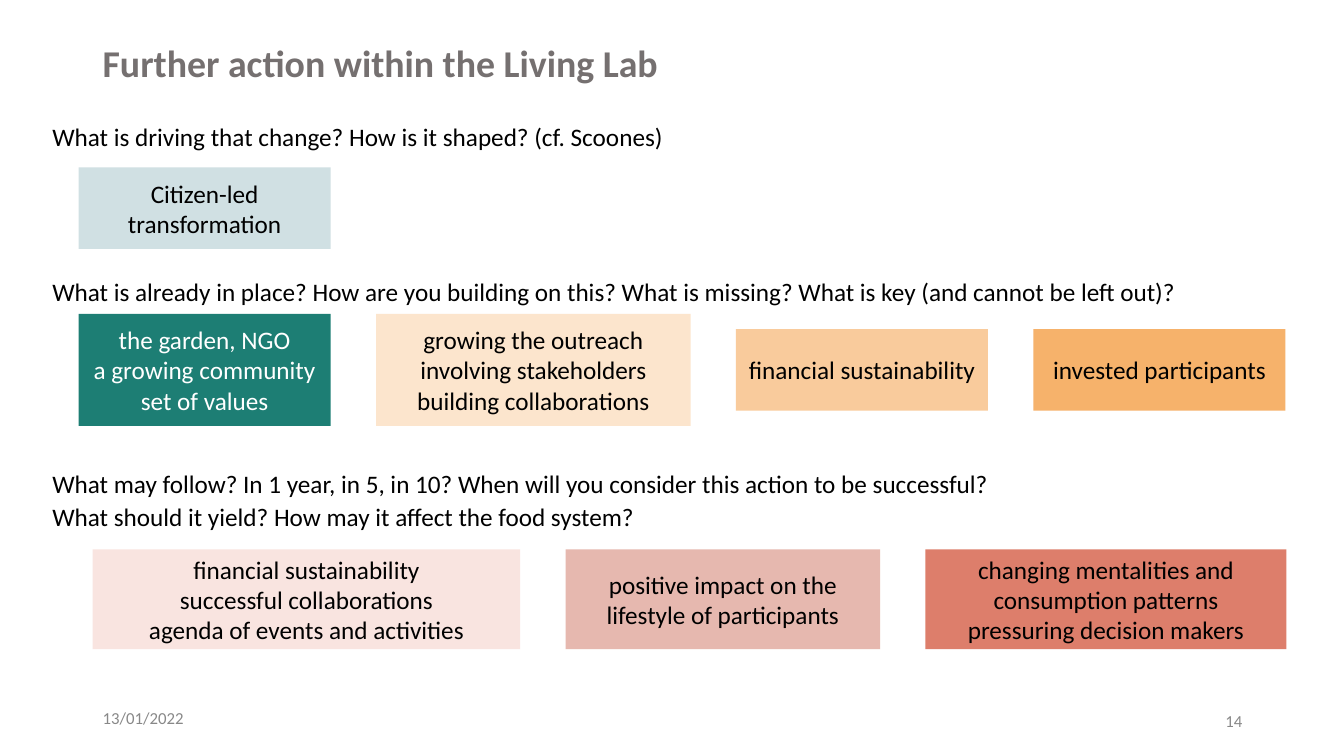
from pptx import Presentation
from pptx.dml.color import RGBColor as RGB
from pptx.enum.shapes import MSO_SHAPE as Shape
from pptx.enum.text import MSO_ANCHOR as Anchor, PP_ALIGN as Align
from pptx.util import Inches, Pt

BLACK = RGB(0x00, 0x00, 0x00)
WHITE = RGB(0xFF, 0xFF, 0xFF)
TITLE = RGB(0x75, 0x70, 0x70)
GREY = RGB(0x88, 0x88, 0x88)
MIST = RGB(0xD0, 0xE0, 0xE3)
TEAL = RGB(0x1D, 0x7E, 0x74)
CREAM = RGB(0xFC, 0xE5, 0xCD)
PEACH = RGB(0xF9, 0xCB, 0x9C)
AMBER = RGB(0xF6, 0xB2, 0x6B)
BLUSH = RGB(0xF9, 0xE4, 0xE0)
ROSE = RGB(0xE6, 0xB8, 0xAF)
CORAL = RGB(0xDD, 0x7E, 0x6B)

deck = Presentation()
deck.slide_width = Inches(13.33)
deck.slide_height = Inches(7.5)
slide = deck.slides.add_slide(deck.slide_layouts[6])


def place(x, y, w, h):
    wide, high = deck.slide_width / 100, deck.slide_height / 100
    return int(x * wide), int(y * high), int(w * wide), int(h * high)


def write(shape, lines, size, color, align, anchor, pad, space=1.0, bold=False):
    frame = shape.text_frame
    frame.word_wrap = True
    frame.vertical_anchor = anchor
    frame.margin_left = frame.margin_right = Inches(0.1)
    frame.margin_top = frame.margin_bottom = Inches(pad)
    for i, line in enumerate(lines):
        para = frame.add_paragraph() if i else frame.paragraphs[0]
        para.alignment = align
        para.line_spacing = space
        run = para.add_run()
        run.text = line
        run.font.name = "Calibri"
        run.font.size = Pt(size)
        run.font.bold = bold
        run.font.color.rgb = color


title = slide.shapes.add_textbox(*place(6.9, 5.87, 86.27, 6.13))
write(title, ["Further action within the Living Lab"], 27, TITLE,
      Align.LEFT, Anchor.MIDDLE, 0.05, 0.7, True)

asks = [
    (15.07, 5.2, 0.05, ["What is driving that change? How is it shaped? (cf. Scoones)"]),
    (34.93, 6.67, 0.1, ["What is already in place? How are you building on this? "
                        "What is missing? What is key (and cannot be left out)?"]),
    (60.4, 11.07, 0.1, ["What may follow? In 1 year, in 5, in 10? "
                        "When will you consider this action to be successful?",
                        "What should it yield? How may it affect the food system?"]),
]
for top, high, pad, lines in asks:
    box = slide.shapes.add_textbox(*place(3.15, top, 86.8, high))
    write(box, lines, 18, BLACK, Align.LEFT, Anchor.TOP, pad, 1.07)

GAP = 3.38
rows = [
    (5.85, 27.53, [
        (18.75, 10.8, MIST, BLACK, ["Citizen-led transformation"]),
    ]),
    (5.85, 48.93, [
        (18.75, 14.8, TEAL, WHITE,
         ["the garden, NGO", "a growing community", "set of values"]),
        (23.4, 14.8, CREAM, BLACK,
         ["growing the outreach", "involving stakeholders building collaborations"]),
        (18.75, 10.8, PEACH, BLACK, ["financial sustainability"]),
        (18.75, 10.8, AMBER, BLACK, ["invested participants"]),
    ]),
    (6.9, 79.27, [
        (31.8, 13.2, BLUSH, BLACK,
         ["financial sustainability", "successful collaborations",
          "agenda of events and activities"]),
        (23.4, 13.2, ROSE, BLACK, ["positive impact on the lifestyle of participants"]),
        (26.86, 13.2, CORAL, BLACK,
         ["changing mentalities and consumption patterns", "pressuring decision makers"]),
    ]),
]
for left, mid, cards in rows:
    for wide, high, fill, ink, lines in cards:
        card = slide.shapes.add_shape(
            Shape.RECTANGLE, *place(left, mid - high / 2, wide, high))
        card.shadow.inherit = False
        card.fill.solid()
        card.fill.fore_color.rgb = fill
        card.line.fill.background()
        write(card, lines, 18, ink, Align.CENTER, Anchor.MIDDLE, 0.1)
        left += wide + GAP

foot = [
    (6.9, 92.27, Align.LEFT, "13/01/2022"),
    (70.67, 92.67, Align.RIGHT, "14"),
]
for left, top, align, text in foot:
    box = slide.shapes.add_textbox(*place(left, top, 22.5, 5.33))
    write(box, [text], 12, GREY, align, Anchor.MIDDLE, 0.05)

deck.save("out.pptx")
